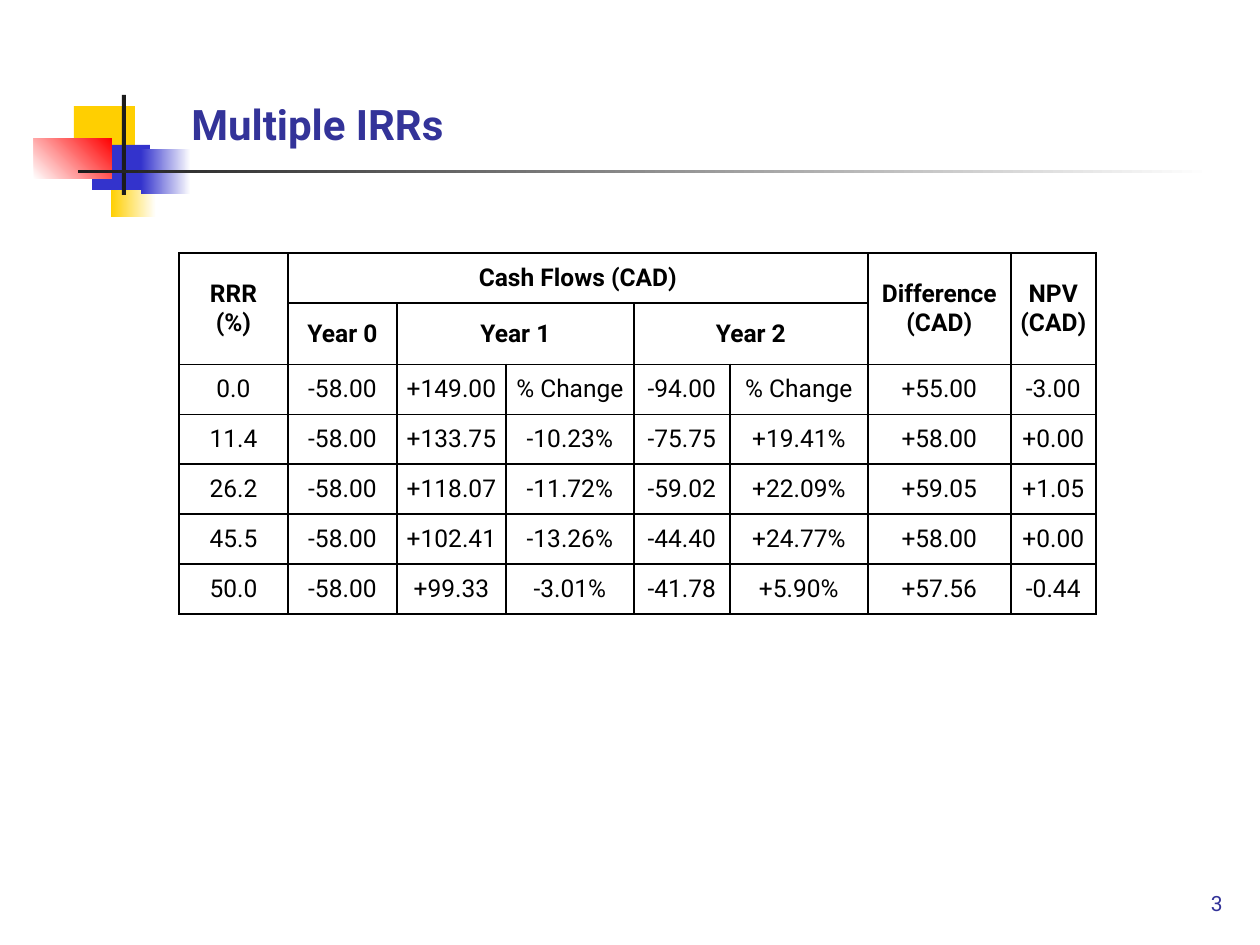
from lxml import etree
from pptx import Presentation
from pptx import util as u
from pptx.dml.color import RGBColor
from pptx.enum import shapes, text
from pptx.oxml import ns

COLORS = {
    "white": "FFFFFF", "black": "000000", "ink": "1C1C1C", "title": "333399",
    "yellow": "FFCF01", "blue": "3333CC", "red": "FF0000",
}
FONT = "Roboto"
PX = u.Inches(1) / 126

ORNAMENT = [
    ((111, 151, 45, 66), ("yellow", "white"), 0),
    ((74, 106, 61, 44), ("yellow",), 0),
    ((92, 145, 58, 45), ("blue",), 0),
    ((141, 149, 50, 45), ("blue", "white"), 0),
    ((34, 138, 78, 41), ("white", "red"), 45),
    ((122, 95, 4, 100), ("ink",), 0),
    ((78, 170, 1134, 3), ("ink", "white"), 0),
]
LABELS = [
    ("Multiple IRRs", (179, 83, 769, 72), "LEFT", {"size": u.Pt(24), "bold": True}),
    ("3", (948, 859, 287, 63), "RIGHT", {"size": u.Pt(12), "bold": False}),
]

TABLE_LEFT, TABLE_TOP, ROW_HEIGHT = 179, 253, 50
COLUMN_WIDTHS = [109, 109, 109, 128, 96, 138, 143, 85]
HEADER_ROWS = 2
ROWS = [
    ["RRR\n(%)", "Cash Flows (CAD)", "", "", "", "", "Difference\n(CAD)", "NPV\n(CAD)"],
    ["", "Year 0", "Year 1", "", "Year 2", "", "", ""],
    ["0.0", "-58.00", "+149.00", "% Change", "-94.00", "% Change", "+55.00", "-3.00"],
    ["11.4", "-58.00", "+133.75", "-10.23%", "-75.75", "+19.41%", "+58.00", "+0.00"],
    ["26.2", "-58.00", "+118.07", "-11.72%", "-59.02", "+22.09%", "+59.05", "+1.05"],
    ["45.5", "-58.00", "+102.41", "-13.26%", "-44.40", "+24.77%", "+58.00", "+0.00"],
    ["50.0", "-58.00", "+99.33", "-3.01%", "-41.78", "+5.90%", "+57.56", "-0.44"],
]
MERGES = [((0, 0), (1, 0)), ((0, 1), (0, 5)), ((0, 6), (1, 6)),
          ((0, 7), (1, 7)), ((1, 2), (1, 3)), ((1, 4), (1, 5))]
CELL_FORMAT = {
    "vertical_anchor": text.MSO_ANCHOR.MIDDLE,
    "margin_left": u.Inches(0.05), "margin_right": u.Inches(0.05),
    "margin_top": u.Inches(0.01), "margin_bottom": u.Inches(0.01),
}


def px(*lengths):
    return [u.Emu(round(length * PX)) for length in lengths]


def color(name):
    return RGBColor.from_string(COLORS[name])


def set_all(target, values):
    for name, value in values.items():
        setattr(target, name, value)


def style_text(frame, align, color_name, font_format):
    for paragraph in frame.paragraphs:
        paragraph.alignment = text.PP_ALIGN[align]
        for run in paragraph.runs:
            set_all(run.font, {"name": FONT, **font_format})
            run.font.color.rgb = color(color_name)


def add_bar(slide, box, fill_colors, angle):
    bar = slide.shapes.add_shape(shapes.MSO_SHAPE.RECTANGLE, *px(*box))
    bar.shadow.inherit = False
    bar.line.fill.background()
    if len(fill_colors) == 1:
        bar.fill.solid()
        bar.fill.fore_color.rgb = color(fill_colors[0])
    else:
        bar.fill.gradient()
        bar.fill.gradient_angle = angle
        for stop, name in zip(bar.fill.gradient_stops, fill_colors):
            stop.color.rgb = color(name)


def add_label(slide, words, box, align, font_format):
    frame = slide.shapes.add_textbox(*px(*box)).text_frame
    set_all(frame, {"word_wrap": True, "vertical_anchor": text.MSO_ANCHOR.BOTTOM,
                    "text": words})
    style_text(frame, align, "title", font_format)


def add_borders(cell):
    properties = cell._tc.get_or_add_tcPr()
    for side in ("a:lnL", "a:lnR", "a:lnT", "a:lnB"):
        border = etree.SubElement(properties, ns.qn(side), w=str(u.Pt(1)))
        fill = etree.SubElement(border, ns.qn("a:solidFill"))
        etree.SubElement(fill, ns.qn("a:srgbClr"), val=COLORS["black"])


def add_cash_flows(slide):
    box = (TABLE_LEFT, TABLE_TOP, sum(COLUMN_WIDTHS), ROW_HEIGHT * len(ROWS))
    table = slide.shapes.add_table(len(ROWS), len(COLUMN_WIDTHS), *px(*box)).table
    set_all(table, {"first_row": False, "horz_banding": False})
    for column, width in zip(table.columns, px(*COLUMN_WIDTHS)):
        column.width = width
    for row_index, values in enumerate(ROWS):
        table.rows[row_index].height = px(ROW_HEIGHT)[0]
        for column_index, value in enumerate(values):
            cell = table.cell(row_index, column_index)
            set_all(cell, {**CELL_FORMAT, "text": value})
            add_borders(cell)
            cell.fill.background()
            style_text(cell.text_frame, "CENTER", "black",
                       {"size": u.Pt(14), "bold": row_index < HEADER_ROWS})
    for first, last in MERGES:
        table.cell(*first).merge(table.cell(*last))


def main():
    deck = Presentation()
    set_all(deck, {"slide_width": u.Inches(10), "slide_height": u.Inches(7.5)})
    slide = deck.slides.add_slide(deck.slide_layouts[6])
    for bar in ORNAMENT:
        add_bar(slide, *bar)
    for label in LABELS:
        add_label(slide, *label)
    add_cash_flows(slide)
    deck.save("out.pptx")


if __name__ == "__main__":
    main()
